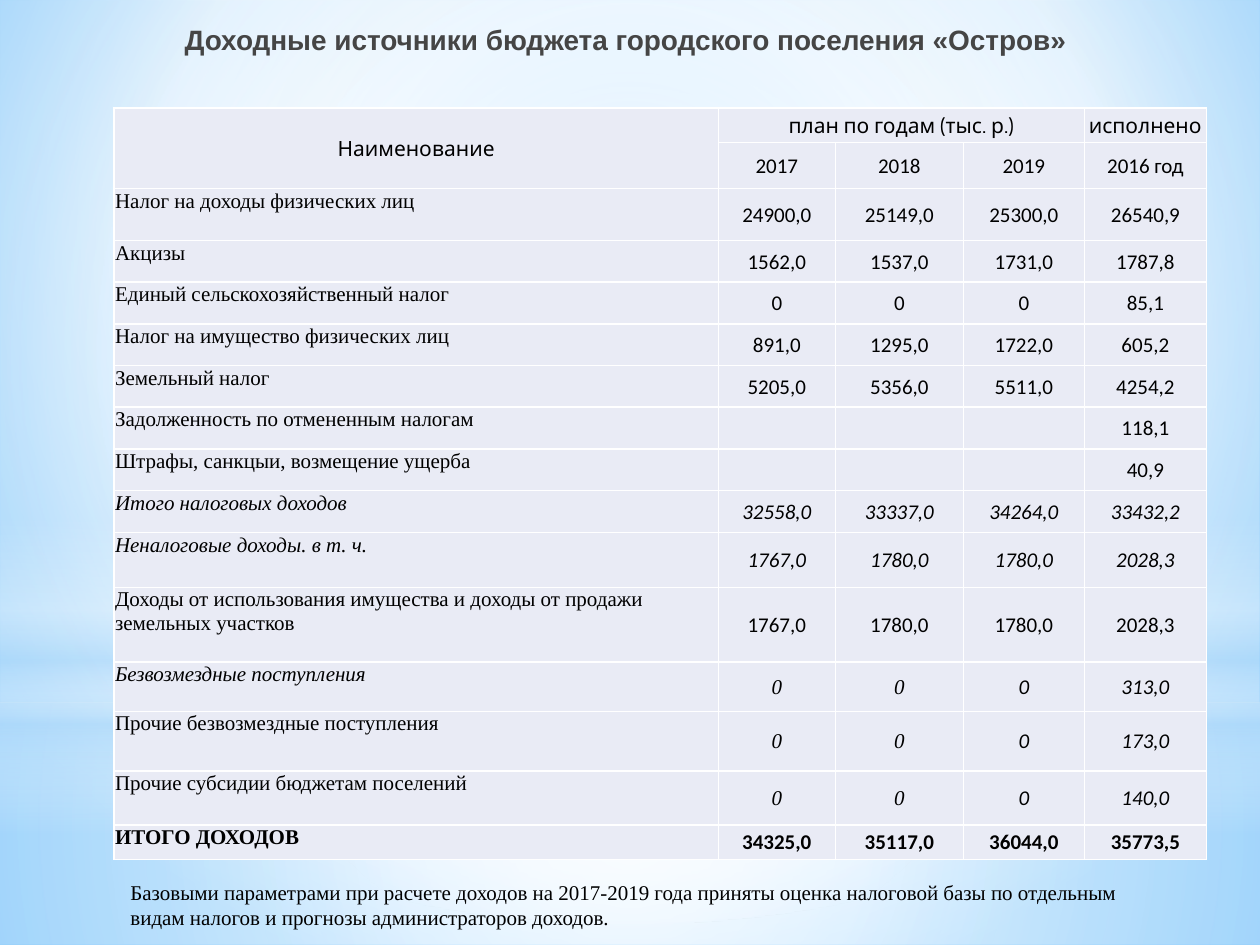
from lxml import etree
from pptx import Presentation, oxml
from pptx import util as u
from pptx.dml.color import RGBColor
from pptx.enum import shapes, text
from pptx.oxml.ns import nsdecls, qn

COLORS = {
    "white": "FFFFFF", "pale": "B4DCFA", "sky": "9ED5FF", "azure": "5BB9FF",
    "cell": "E9EBF5", "title": "454545", "ink": "000000",
}
SLIDE_SIZE = (25.4, 19.05)
CENTRE = (50, 50, 50, 50)
COLUMN_WIDTHS = (12.18, 2.36, 2.58, 2.44, 2.46)
HEADER_HEIGHTS = (0.69, 0.93)
YEARS = ("2017", "2018", "2019", "2016 год")
PLAIN, ITALIC, BOLD = {}, {"italic": True}, {"bold": True}
SERIF, SANS, HEADING = "Times New Roman", "Calibri", "Cabin"

INCOME = [
    (1.05, "Налог на доходы физических лиц", PLAIN, ("24900,0", "25149,0", "25300,0", "26540,9"), PLAIN),
    (0.84, "Акцизы", PLAIN, ("1562,0", "1537,0", "1731,0", "1787,8"), PLAIN),
    (0.84, "Единый сельскохозяйственный налог", PLAIN, ("0", "0", "0", "85,1"), PLAIN),
    (0.84, "Налог на имущество физических лиц", PLAIN, ("891,0", "1295,0", "1722,0", "605,2"), PLAIN),
    (0.84, "Земельный налог", PLAIN, ("5205,0", "5356,0", "5511,0", "4254,2"), PLAIN),
    (0.84, "Задолженность по отмененным налогам", PLAIN, ("", "", "", "118,1"), PLAIN),
    (0.84, "Штрафы, санкцыи, возмещение ущерба", PLAIN, ("", "", "", "40,9"), PLAIN),
    (0.85, "Итого налоговых доходов", ITALIC, ("32558,0", "33337,0", "34264,0", "33432,2"), ITALIC),
    (1.1, "Неналоговые доходы. в т. ч.", ITALIC, ("1767,0", "1780,0", "1780,0", "2028,3"), ITALIC),
    (1.51, "Доходы от использования имущества и доходы от продажи земельных участков", PLAIN,
     ("1767,0", "1780,0", "1780,0", "2028,3"), PLAIN),
    (0.99, "Безвозмездные поступления", ITALIC, ("0", "0", "0", "313,0"), ITALIC),
    (1.2, "Прочие безвозмездные поступления", PLAIN, ("0", "0", "0", "173,0"), ITALIC),
    (1.09, "Прочие субсидии бюджетам поселений", PLAIN, ("0", "0", "0", "140,0"), ITALIC),
    (0.7, "ИТОГО ДОХОДОВ", BOLD, ("34325,0", "35117,0", "36044,0", "35773,5"), BOLD),
]
SERIF_VALUE_LABELS = {row[1] for row in INCOME[10:13]}


def lengths(box):
    return [u.Cm(value) for value in box]


def apply(target, values):
    for name, value in values.items():
        setattr(target, name, value)


def gradient_element(stops, focus=None):
    stop_xml = "".join(
        f'<a:gs pos="{position * 1000}"><a:srgbClr val="{COLORS[color]}">'
        f'<a:alpha val="{alpha * 1000}"/></a:srgbClr></a:gs>'
        for position, color, alpha in stops
    )
    if focus:
        sides = " ".join(f'{side}="{value * 1000}"' for side, value in zip("ltrb", focus))
        direction = f'<a:path path="circle"><a:fillToRect {sides}/></a:path>'
    else:
        direction = '<a:lin ang="5400000" scaled="0"/>'
    return oxml.parse_xml(
        f'<a:gradFill {nsdecls("a")} rotWithShape="1"><a:gsLst>{stop_xml}</a:gsLst>{direction}</a:gradFill>'
    )


def replace_gradient(properties, gradient):
    properties.replace(properties.find(qn("a:gradFill")), gradient)


def add_glow(slide, box, kind, stops, focus=None):
    shape = slide.shapes.add_shape(kind, *lengths(box))
    shape.shadow.inherit = False
    shape.line.fill.background()
    shape.fill.gradient()
    replace_gradient(shape._element.spPr, gradient_element(stops, focus))


def add_backdrop(slide, box):
    slide.background.fill.gradient()
    replace_gradient(
        slide._element.cSld.find(qn("p:bg")).find(qn("p:bgPr")),
        gradient_element([(0, "sky", 100), (60, "white", 100), (100, "azure", 100)], (20, 10, 20, 60)),
    )
    left, top, width, height = box
    horizon = 14.17
    rectangle, ellipse = shapes.MSO_SHAPE.RECTANGLE, shapes.MSO_SHAPE.OVAL
    add_glow(slide, (left, top + horizon, width, height - horizon), rectangle,
             [(0, "white", 91), (37, "white", 76), (100, "pale", 79)], CENTRE)
    add_glow(slide, (left, top, width, horizon), rectangle,
             [(0, "white", 89), (48, "white", 62), (100, "pale", 79)], CENTRE)
    add_glow(slide, (left, top + 10.46, width, 6.35), rectangle,
             [(0, "white", 0), (29, "white", 30), (45, "pale", 40),
              (55, "white", 26), (65, "pale", 60), (100, "white", 0)])
    add_glow(slide, (left, top + 4.45, width, horizon), ellipse,
             [(0, "white", 100), (56, "white", 0)], CENTRE)


def write(paragraph, words, color="ink", **font_values):
    run = paragraph.add_run()
    run.text = words
    apply(run.font, {"size": u.Pt(12), **font_values})
    run.font.color.rgb = RGBColor.from_string(COLORS[color])


def add_text(slide, box, words, anchor, align, **font_values):
    frame = slide.shapes.add_textbox(*lengths(box)).text_frame
    apply(frame, {"word_wrap": True, "vertical_anchor": anchor})
    frame.paragraphs[0].alignment = align
    write(frame.paragraphs[0], words, **font_values)


def add_borders(cell):
    properties = cell._tc.get_or_add_tcPr()
    for index, side in enumerate(("lnL", "lnR", "lnT", "lnB")):
        line = etree.Element(qn(f"a:{side}"), w=str(u.Pt(1)))
        fill = etree.SubElement(line, qn("a:solidFill"))
        etree.SubElement(fill, qn("a:srgbClr"), val=COLORS["white"])
        properties.insert(index, line)


def fill_cell(cell, words, centred=True, **font_values):
    paragraph = cell.text_frame.paragraphs[0]
    if centred:
        cell.vertical_anchor = text.MSO_ANCHOR.MIDDLE
        paragraph.alignment = text.PP_ALIGN.CENTER
    if words:
        write(paragraph, words, **font_values)


def add_income_table(slide, left, top):
    heights = HEADER_HEIGHTS + tuple(row[0] for row in INCOME)
    box = (left, top, sum(COLUMN_WIDTHS), sum(heights))
    table = slide.shapes.add_table(len(heights), len(COLUMN_WIDTHS), *lengths(box)).table
    apply(table, {"first_row": False, "horz_banding": False})
    for column, width in zip(table.columns, COLUMN_WIDTHS):
        column.width = u.Cm(width)
    for row, height in zip(table.rows, heights):
        row.height = u.Cm(height)
    margins = {"margin_left": u.Cm(0.02), "margin_right": u.Cm(0.02),
               "margin_top": u.Cm(0.02), "margin_bottom": 0}
    for cell in table.iter_cells():
        apply(cell, margins)
        cell.fill.solid()
        cell.fill.fore_color.rgb = RGBColor.from_string(COLORS["cell"])
        add_borders(cell)

    table.cell(0, 0).merge(table.cell(1, 0))
    table.cell(0, 1).merge(table.cell(0, 3))
    for column, words in ((0, "Наименование"), (1, "план по годам (тыс. р.)"), (4, "исполнено")):
        fill_cell(table.cell(0, column), words, name=HEADING)
    for column, year in enumerate(YEARS, 1):
        fill_cell(table.cell(1, column), year, name=SANS)
    for row, (_, label, label_style, values, value_style) in enumerate(INCOME, len(HEADER_HEIGHTS)):
        fill_cell(table.cell(row, 0), label, centred=False, name=SERIF, **label_style)
        for column, value in enumerate(values, 1):
            serif = label in SERIF_VALUE_LABELS and column < 3
            fill_cell(table.cell(row, column), value, name=SERIF if serif else SANS, **value_style)


def main():
    presentation = Presentation()
    presentation.slide_width, presentation.slide_height = lengths(SLIDE_SIZE)
    slide = presentation.slides.add_slide(presentation.slide_layouts[6])
    add_backdrop(slide, (0, 0, *SLIDE_SIZE))
    add_text(slide, (3, 0.33, 19.23, 1.85), "Доходные источники бюджета городского поселения «Остров»",
             text.MSO_ANCHOR.TOP, text.PP_ALIGN.CENTER,
             color="title", name="Arial", size=u.Pt(16), bold=True)
    add_income_table(slide, 2.3, 2.18)
    add_text(slide, (2.38, 16.56, 20.93, 2.31),
             "Базовыми параметрами при расчете доходов на 2017-2019 года приняты оценка налоговой базы "
             "по отдельным видам налогов и прогнозы администраторов доходов.",
             text.MSO_ANCHOR.BOTTOM, text.PP_ALIGN.LEFT, name=SERIF)
    presentation.save("out.pptx")


if __name__ == "__main__":
    main()
